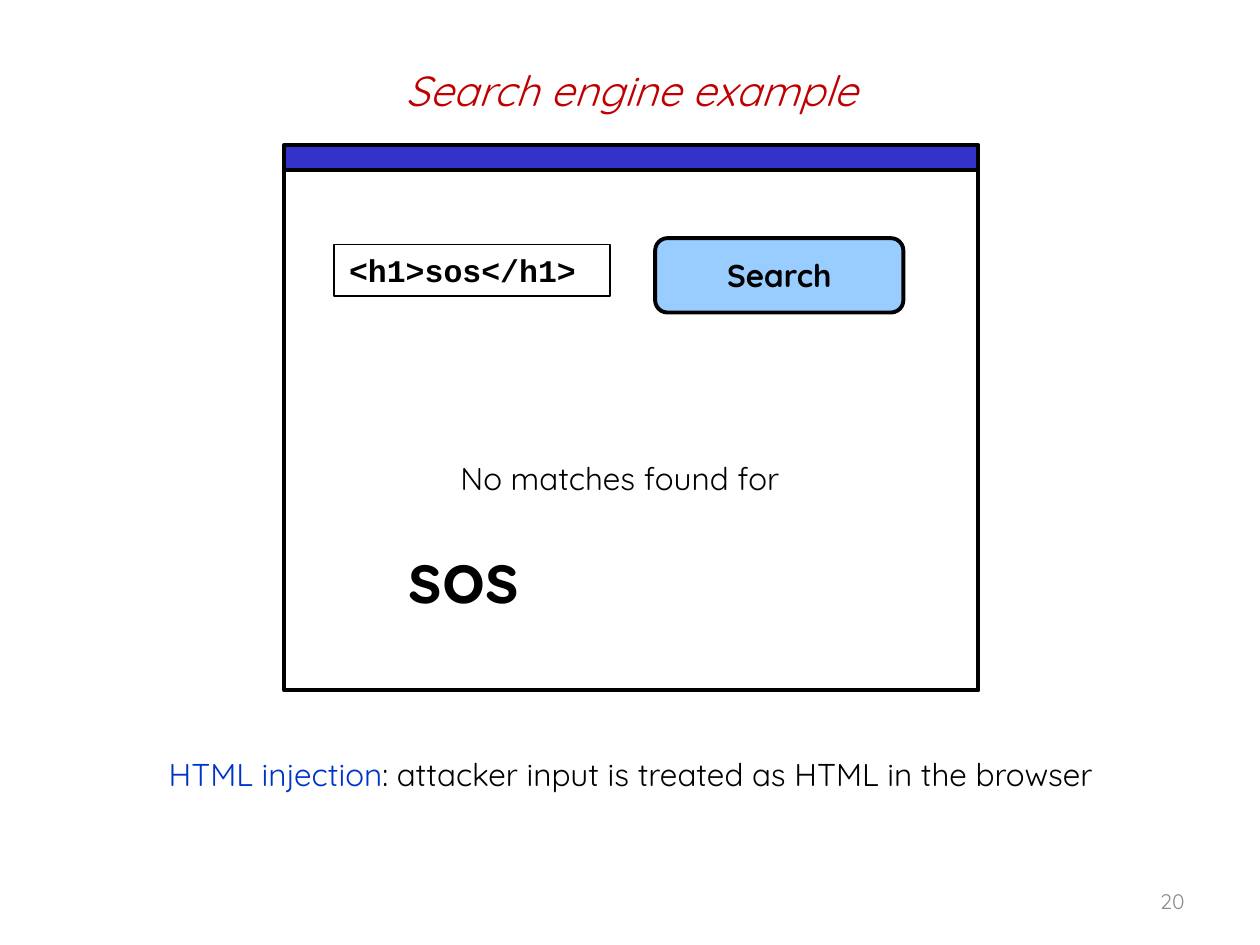
"""Build the slide that shows HTML injection in a search engine page."""
from pptx import Presentation
from pptx.dml.color import RGBColor
from pptx.enum.shapes import MSO_SHAPE as SHAPE
from pptx.enum.text import MSO_ANCHOR as ANCHOR, PP_ALIGN as ALIGN
from pptx.util import Inches, Pt

COLORS = {
    "title": "C00000", "number": "8C8C8C", "ink": "000000", "page": "FFFFFF",
    "bar": "3333CC", "button": "99CCFF", "term": "0033CC",
}

prs = Presentation()
prs.slide_width, prs.slide_height = Inches(10), Inches(7.5)
COL, ROW = prs.slide_width / 100, prs.slide_height / 75


def grid(x, y, w, h):
    return int(x * COL), int(y * ROW), int(w * COL), int(h * ROW)


def write(p, text, size=18, font="Quicksand", color="ink", bold=False,
          italic=False, align=ALIGN.LEFT):
    p.alignment = align
    r = p.add_run()
    r.text = text
    r.font.name, r.font.size = font, Pt(size)
    r.font.bold, r.font.italic = bold, italic
    r.font.color.rgb = RGBColor.from_string(COLORS[color])


s = prs.slides.add_slide(prs.slide_layouts[5])

title = s.shapes.title
title.left, title.top, title.width, title.height = grid(5.1, 2.1, 90, 10.1)
title.text_frame.vertical_anchor = ANCHOR.MIDDLE
write(title.text_frame.paragraphs[0], "Search engine example", size=24,
      color="title", italic=True, align=ALIGN.CENTER)

number = s.shapes.add_textbox(*grid(71.7, 69.5, 23.3, 4))
number.text_frame.word_wrap = True
number.text_frame.vertical_anchor = ANCHOR.MIDDLE
write(number.text_frame.paragraphs[0], "20", size=12, color="number",
      align=ALIGN.RIGHT)

browser = s.shapes.add_group_shape()
parts = {}
for part, preset, area, fill, line in [
    ("page", SHAPE.RECTANGLE, (22.55, 13.5, 55.1, 41.3), "page", 2.25),
    ("bar", SHAPE.RECTANGLE, (22.55, 11.5, 55.1, 2), "bar", 2.25),
    ("query", SHAPE.RECTANGLE, (26.5, 19.4, 21.9, 4.1), None, 1),
    ("button", SHAPE.ROUNDED_RECTANGLE, (52, 18.9, 19.7, 5.9), "button", 2.25),
]:
    sp = parts[part] = browser.shapes.add_shape(preset, *grid(*area))
    sp.shadow.inherit = False
    if fill:
        sp.fill.solid()
        sp.fill.fore_color.rgb = RGBColor.from_string(COLORS[fill])
    else:
        sp.fill.background()
    sp.line.color.rgb = RGBColor.from_string(COLORS["ink"])
    sp.line.width = Pt(line)

tf = parts["query"].text_frame
tf.vertical_anchor = ANCHOR.TOP
tf.margin_left = Inches(0.12)
write(tf.paragraphs[0], "<h1>sos</h1>", font="Courier New", bold=True)

tf = parts["button"].text_frame
tf.vertical_anchor = ANCHOR.MIDDLE
write(tf.paragraphs[0], "Search", bold=True, align=ALIGN.CENTER)

result = browser.shapes.add_textbox(*grid(29.2, 35.9, 40, 13.8))
tf = result.text_frame
tf.word_wrap = True
write(tf.paragraphs[0], "No matches found for", align=ALIGN.CENTER)
p = tf.add_paragraph()
p.space_before = Pt(21.5)
p._p.get_or_add_pPr().set("marL", str(int(2.25 * COL)))
write(p, "sos", size=40, bold=True)

caption = s.shapes.add_textbox(*grid(12.4, 59.4, 79.7, 4))
tf = caption.text_frame
tf.word_wrap = True
write(tf.paragraphs[0], "HTML injection", color="term")
write(tf.paragraphs[0], ": attacker input is treated as HTML in the browser")

prs.save("out.pptx")
